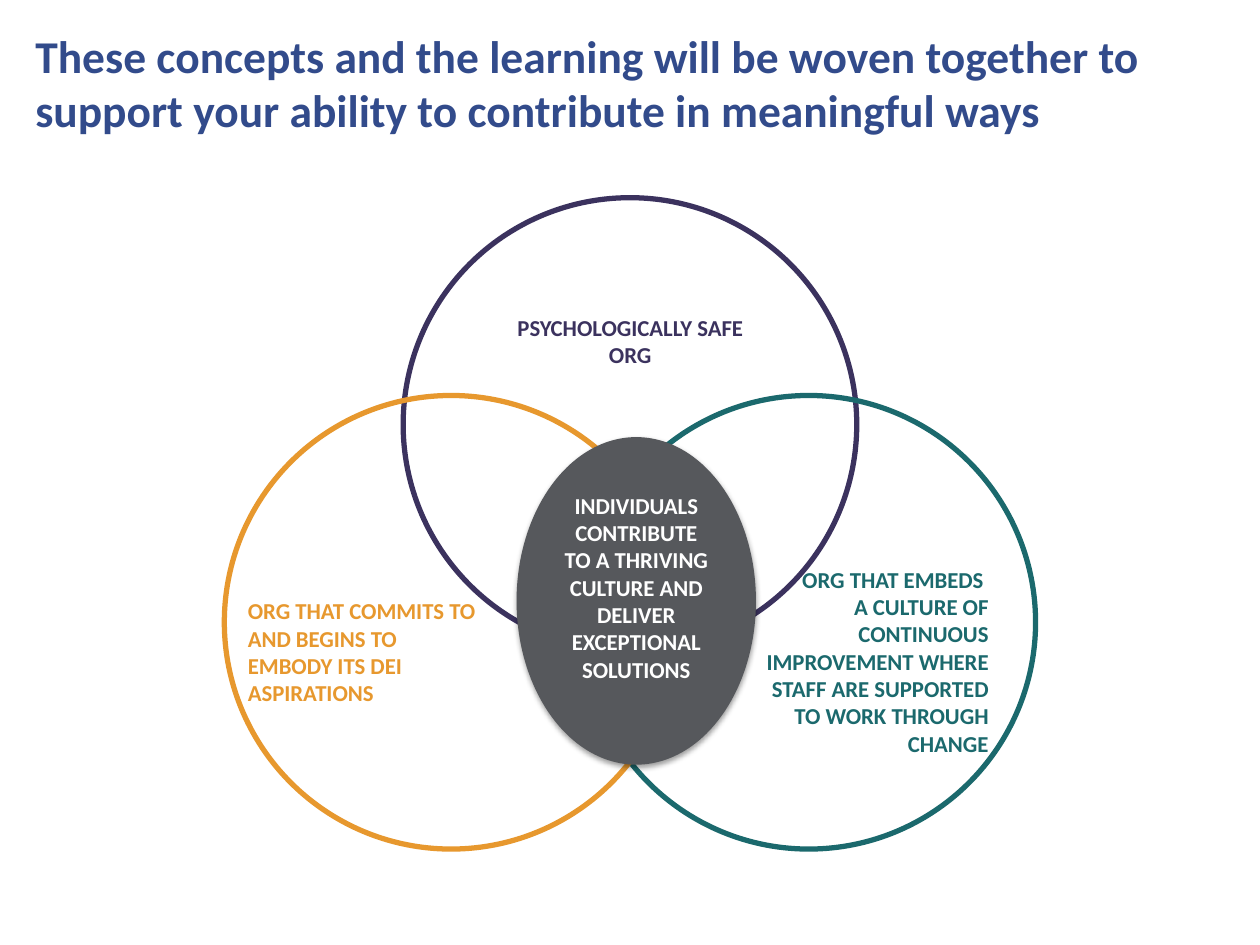
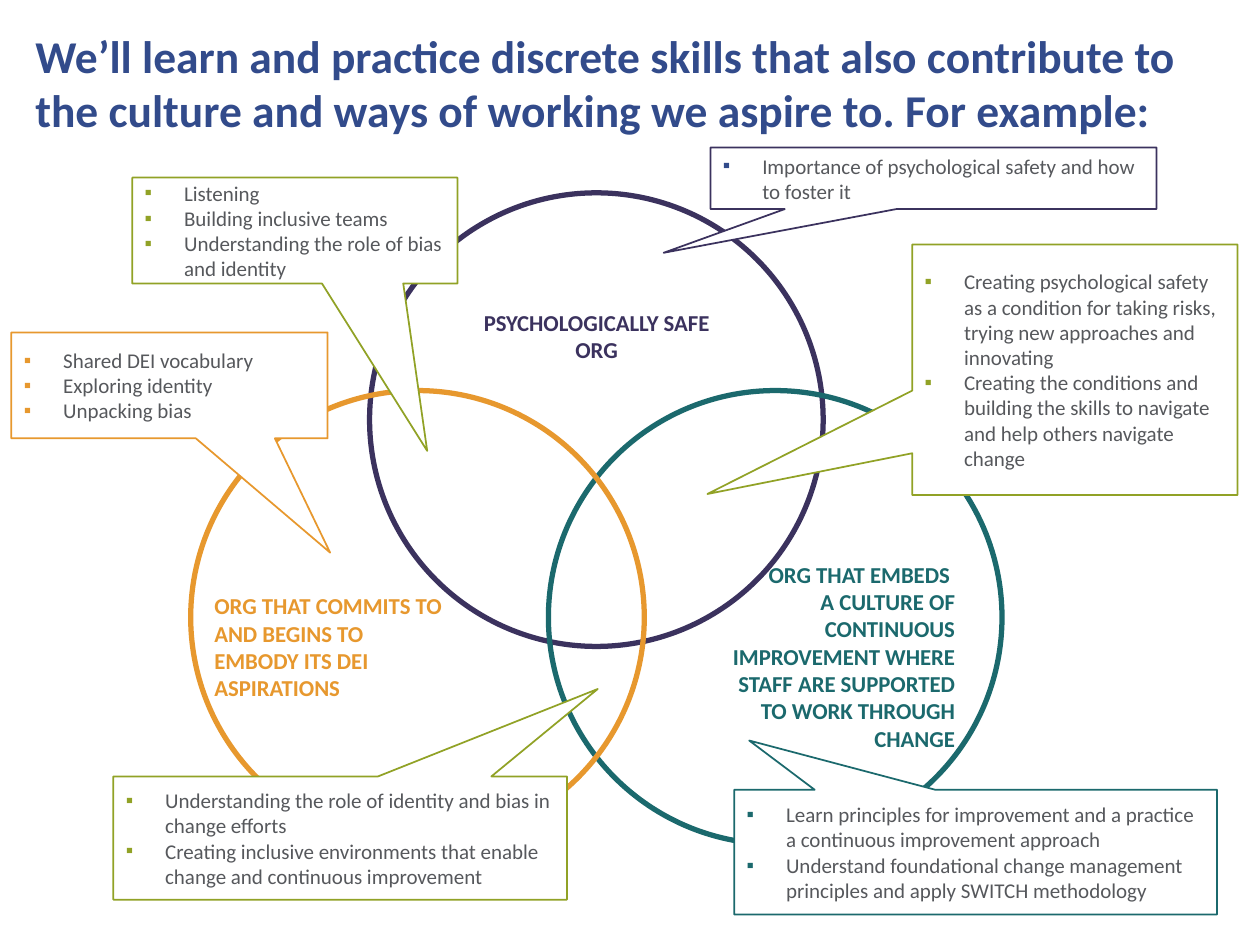
from lxml.etree import SubElement
from pptx import Presentation
from pptx.dml.color import RGBColor
from pptx.enum.shapes import MSO_SHAPE as Shape
from pptx.enum.text import MSO_ANCHOR as Anchor, PP_ALIGN as Align
from pptx.oxml.ns import qn
from pptx.util import Pt

FONT = "Calibri"
BLUE = RGBColor(0x32, 0x4B, 0x8B)
PURPLE = RGBColor(0x3B, 0x32, 0x5E)
TEAL = RGBColor(0x1B, 0x69, 0x6D)
ORANGE = RGBColor(0xE7, 0x98, 0x2E)
GREEN = RGBColor(0x91, 0xA2, 0x26)
GRAY = RGBColor(0x56, 0x58, 0x5C)
WHITE = RGBColor(0xFF, 0xFF, 0xFF)

TITLE_AREA = (20.2, 15.8, 679, 41.8)
WEAVE_TITLE = ("These concepts and the learning will be woven together to support "
               "your ability to contribute in meaningful ways")
SKILLS_TITLE = ("We’ll learn and practice discrete skills that also contribute to "
                "the culture and ways of working we aspire to. For example:")

# Circles and captions are placed relative to the corner of the top circle.
WEAVE_CORNER = (230.4, 113)
SKILLS_CORNER = (211.2, 110.2)
DIAMETER = 259.2
SIDE_STEP, DOWN_STEP = 102.2, 113
CIRCLES = [(0, 0, PURPLE), (SIDE_STEP, DOWN_STEP, TEAL), (-SIDE_STEP, DOWN_STEP, ORANGE)]
CAPTIONS = [
    ((53, 62.6, 153.4, 39), PURPLE, Align.CENTER, ["PSYCHOLOGICALLY SAFE ORG"]),
    ((-95.8, 224.6, 146.9, 70.6), ORANGE, Align.LEFT,
     ["ORG THAT COMMITS TO AND BEGINS TO EMBODY ITS DEI ASPIRATIONS"]),
    ((194.6, 206.6, 146.9, 117.4), TEAL, Align.RIGHT,
     ["ORG THAT EMBEDS ",
      "A CULTURE OF CONTINUOUS IMPROVEMENT WHERE STAFF ARE SUPPORTED "
      "TO WORK THROUGH CHANGE"]),
]

CORE_AREA = (295.2, 249.8, 136.8, 187.2)
CORE_TEXT = "INDIVIDUALS CONTRIBUTE TO A THRIVING CULTURE AND DELIVER EXCEPTIONAL SOLUTIONS"

# Area, pointer tip relative to the centre in box sizes, line, bullet colour, items
CALLOUTS = [
    ((75.6, 101.5, 185.8, 60.5), (0.407, 2.082), GREEN, GREEN,
     ["Listening", "Building inclusive teams",
      "Understanding the role of bias and identity"]),
    ((6.5, 190, 180.7, 60.5), (0.508, 1.58), ORANGE, ORANGE,
     ["Shared DEI vocabulary", "Exploring identity", "Unpacking bias"]),
    ((406, 84.3, 254.9, 35.2), (-0.605, 1.21), PURPLE, BLUE,
     ["Importance of psychological safety and how to foster it"]),
    ((521.3, 139.7, 185.8, 143.2), (-1.13, 0.496), GREEN, GREEN,
     ["Creating psychological safety as a condition for taking risks, "
      "trying new approaches and innovating",
      "Creating the conditions and building the skills to navigate "
      "and help others navigate change"]),
    ((64.8, 443.7, 259.2, 70.4), (0.568, -1.21), GREEN, GREEN,
     ["Understanding the role of identity and bias in change efforts",
      "Creating inclusive environments that enable change and continuous improvement"]),
    ((419.6, 451.3, 275.8, 71.3), (-0.469, -0.895), TEAL, TEAL,
     ["Learn principles for improvement and a practice a continuous "
      "improvement approach",
      "Understand foundational change management principles and apply "
      "SWITCH methodology"]),
]


def in_points(area):
    return [Pt(length) for length in area]


def set_bullet(para, color):
    props = para._p.get_or_add_pPr()
    indent = Pt(22.5)
    props.set("marL", str(indent))
    props.set("indent", str(-indent))
    bullet_color = SubElement(props, qn("a:buClr"))
    SubElement(bullet_color, qn("a:srgbClr"), val=str(color))
    SubElement(props, qn("a:buFont"), typeface="Arial")
    SubElement(props, qn("a:buChar"), char="▪")


def write(box, lines, size=13, color=GRAY, bold=True, align=Align.LEFT,
          anchor=Anchor.TOP, bullet=None, inset=None):
    frame = box.text_frame
    frame.word_wrap = True
    frame.vertical_anchor = anchor
    if inset is not None:
        frame.margin_left = frame.margin_right = Pt(inset)
        frame.margin_top = frame.margin_bottom = Pt(inset)
    for index, line in enumerate(lines):
        para = frame.paragraphs[0] if index == 0 else frame.add_paragraph()
        para.alignment = align
        if bullet is not None:
            set_bullet(para, bullet)
        span = para.add_run()
        span.text = line
        span.font.name = FONT
        span.font.size = Pt(size)
        span.font.bold = bold
        span.font.color.rgb = color


def add_figure(page, kind, area, fill=None, line=None, width=1):
    figure = page.shapes.add_shape(kind, *in_points(area))
    figure.shadow.inherit = False
    if fill is None:
        figure.fill.background()
    else:
        figure.fill.solid()
        figure.fill.fore_color.rgb = fill
    if line is None:
        figure.line.fill.background()
    else:
        figure.line.color.rgb = line
        figure.line.width = Pt(width)
    return figure


def add_soft_shadow(figure):
    effects = figure._element.spPr.find(qn("a:effectLst"))
    shadow = SubElement(effects, qn("a:outerShdw"), blurRad=str(Pt(3.1)),
                        dist=str(Pt(1.6)), dir="5400000", rotWithShape="0")
    color = SubElement(shadow, qn("a:srgbClr"), val="000000")
    SubElement(color, qn("a:alpha"), val="38000")


def add_venn_page(deck, title, corner):
    """Add a page with its title, the three circles and their captions."""
    page = deck.slides.add_slide(deck.slide_layouts[6])
    left, top = corner
    write(page.shapes.add_textbox(*in_points(TITLE_AREA)), [title],
          size=26, color=BLUE, inset=0)
    for right, down, color in CIRCLES:
        add_figure(page, Shape.OVAL, (left + right, top + down, DIAMETER, DIAMETER),
                   line=color, width=3)
    for (right, down, width, height), color, align, lines in CAPTIONS:
        area = (left + right, top + down, width, height)
        write(page.shapes.add_textbox(*in_points(area)), lines, color=color, align=align)
    return page


def add_core(page):
    core = add_figure(page, Shape.OVAL, CORE_AREA, fill=GRAY)
    add_soft_shadow(core)
    write(core, [CORE_TEXT], color=WHITE, align=Align.CENTER)


def add_callouts(page):
    for area, tip, line, bullet, items in CALLOUTS:
        callout = add_figure(page, Shape.RECTANGULAR_CALLOUT, area, fill=WHITE, line=line)
        callout.adjustments[0], callout.adjustments[1] = tip
        write(callout, items, size=12, bold=False, anchor=Anchor.MIDDLE, bullet=bullet)


def main():
    deck = Presentation()
    deck.slide_width, deck.slide_height = Pt(720), Pt(540)
    add_core(add_venn_page(deck, WEAVE_TITLE, WEAVE_CORNER))
    add_callouts(add_venn_page(deck, SKILLS_TITLE, SKILLS_CORNER))
    deck.save("out.pptx")


if __name__ == "__main__":
    main()
